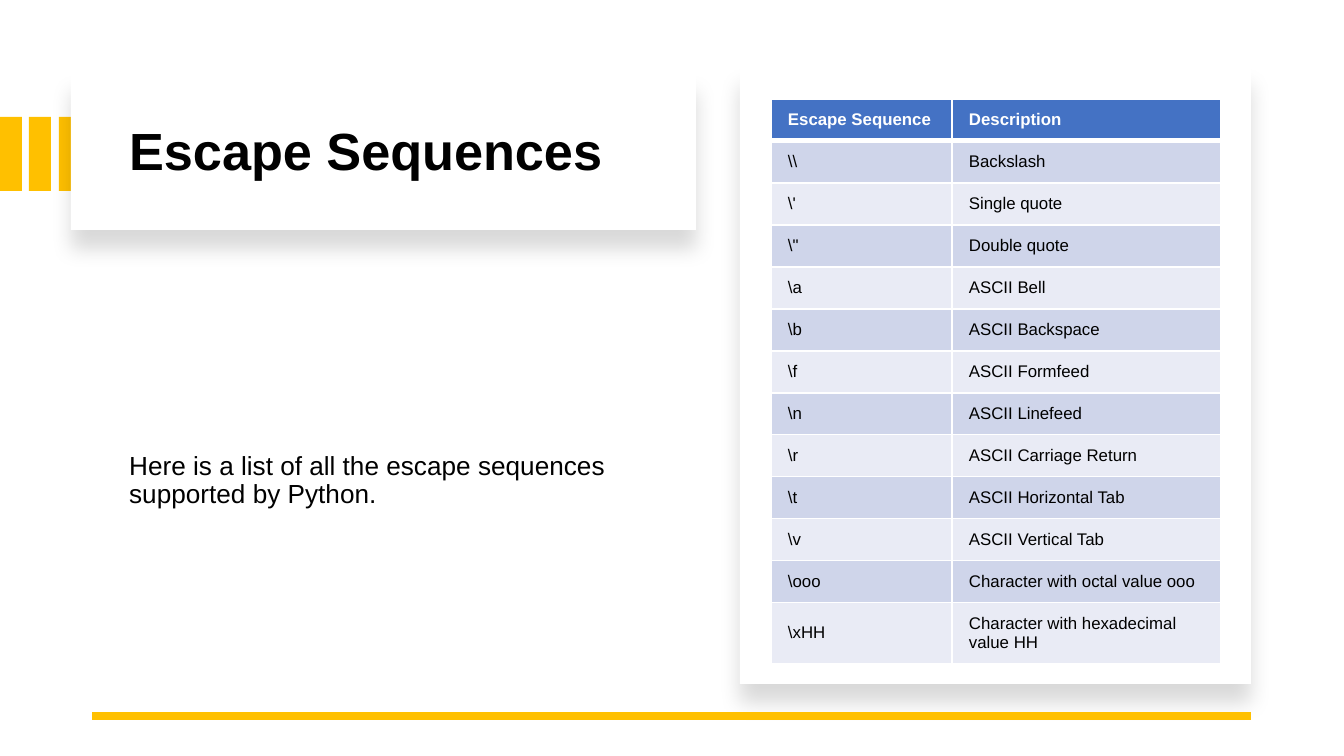
from lxml.etree import SubElement
from pptx import Presentation
from pptx.dml.color import RGBColor
from pptx.enum.shapes import MSO_CONNECTOR, MSO_SHAPE
from pptx.enum.text import MSO_ANCHOR
from pptx.oxml import parse_xml
from pptx.oxml.ns import nsdecls, qn
from pptx.util import Emu, Pt

SCALE = 914400 / 134.4
COLORS = {"gold": "FFC000", "white": "FFFFFF", "black": "000000",
          "head": "4472C4", "odd": "CFD5EA", "even": "E9EBF5"}
ROWS = [
    ("Escape Sequence", "Description"),
    (r"\\", "Backslash"),
    (r"\'", "Single quote"),
    (r"\"", "Double quote"),
    (r"\a", "ASCII Bell"),
    (r"\b", "ASCII Backspace"),
    (r"\f", "ASCII Formfeed"),
    (r"\n", "ASCII Linefeed"),
    (r"\r", "ASCII Carriage Return"),
    (r"\t", "ASCII Horizontal Tab"),
    (r"\v", "ASCII Vertical Tab"),
    (r"\ooo", "Character with octal value ooo"),
    (r"\xHH", "Character with hexadecimal value HH"),
]


def px(num):
    return Emu(round(num * SCALE))


def color(name):
    return RGBColor.from_string(COLORS[name])


class Deck:
    font = "Arial"

    def __init__(self, wide, high):
        self.prs = Presentation()
        self.prs.slide_width, self.prs.slide_height = px(wide), px(high)
        self.slide = self.prs.slides.add_slide(self.prs.slide_layouts[6])
        self.shapes = self.slide.shapes

    def rect(self, box, fill, home=None):
        shape = (home or self.shapes).add_shape(
            MSO_SHAPE.RECTANGLE, *map(px, box))
        shape.shadow.inherit = False
        shape.fill.solid()
        shape.fill.fore_color.rgb = color(fill)
        shape.line.fill.background()
        return shape

    def card(self, box):
        """White panel with a soft shadow below it."""
        shape = self.rect(box, "white")
        effect = shape._element.spPr.find(qn("a:effectLst"))
        effect.append(parse_xml(
            f'<a:outerShdw {nsdecls("a")} blurRad="{Pt(11)}" dist="{Pt(10)}" '
            'dir="5400000" algn="ctr" rotWithShape="0">'
            f'<a:srgbClr val="{COLORS["black"]}"><a:alpha val="15000"/>'
            '</a:srgbClr></a:outerShdw>'))

    def add_run(self, para, text, size, tint="black", bold=False):
        run = para.add_run()
        run.text = text
        font = run.font
        font.name, font.size, font.bold = self.font, Pt(size), bold
        font.color.rgb = color(tint)

    def text(self, box, text, size, bold=False):
        frame = self.shapes.add_textbox(*map(px, box)).text_frame
        frame.word_wrap = True
        frame.vertical_anchor = MSO_ANCHOR.MIDDLE
        para = frame.paragraphs[0]
        para.line_spacing = 0.9
        self.add_run(para, text, size, bold=bold)

    def rule(self, start, end, tint, width):
        line = self.shapes.add_connector(
            MSO_CONNECTOR.STRAIGHT, *map(px, start + end))
        line.line.color.rgb = color(tint)
        line.line.width = Pt(width)
        SubElement(line._element.spPr, qn("a:effectLst"))

    def edge(self, cell, sides):
        """White borders; they come before the fill in the cell's XML."""
        props = cell._tc.get_or_add_tcPr()
        for pos, (side, width) in enumerate(sides.items()):
            props.insert(pos, parse_xml(
                f'<a:ln{side} {nsdecls("a")} w="{Pt(width)}"><a:solidFill>'
                f'<a:srgbClr val="{COLORS["white"]}"/></a:solidFill>'
                f'</a:ln{side}>'))

    def table(self, left, top, cols, highs, rows):
        table = self.shapes.add_table(
            len(rows), len(cols), px(left), px(top),
            px(sum(cols)), px(sum(highs))).table
        for col, wide in zip(table.columns, cols):
            col.width = px(wide)
        for num, (row, high, texts) in enumerate(zip(table.rows, highs, rows)):
            row.height = px(high)
            head = num == 0
            fill = "head" if head else "odd" if num % 2 else "even"
            sides = {"L": 1, "R": 1, "T": 3 if num == 1 else 1,
                     "B": 3 if head else 1}
            for cell, text in zip(row.cells, texts):
                cell.fill.solid()
                cell.fill.fore_color.rgb = color(fill)
                cell.vertical_anchor = MSO_ANCHOR.MIDDLE
                cell.margin_left = cell.margin_right = px(17)
                cell.margin_top = cell.margin_bottom = px(8)
                self.add_run(cell.text_frame.paragraphs[0], text, 9,
                             "white" if head else "black", head)
                self.edge(cell, sides)


def main():
    deck = Deck(1344, 756)

    # Gold bars, partly behind the title card
    bars = deck.shapes.add_group_shape().shapes
    for left in (0, 29, 59):
        deck.rect((left, 117, 22, 74), "gold", bars)

    # Title and body
    deck.card((71, 73, 625, 157))
    deck.text((116, 97, 556, 114), "Escape Sequences", 28, bold=True)
    deck.text((116, 278, 550, 406), "Here is a list of all the escape "
              "sequences supported by Python.", 14)

    # Table card and bottom rule
    deck.card((740, 67, 511, 617))
    deck.rule((1251, 716), (92, 716), "gold", 4.5)
    highs = [42] * (len(ROWS) - 1) + [61]
    deck.table(771, 99, (181, 269), highs, ROWS)

    deck.prs.save("out.pptx")


if __name__ == "__main__":
    main()
